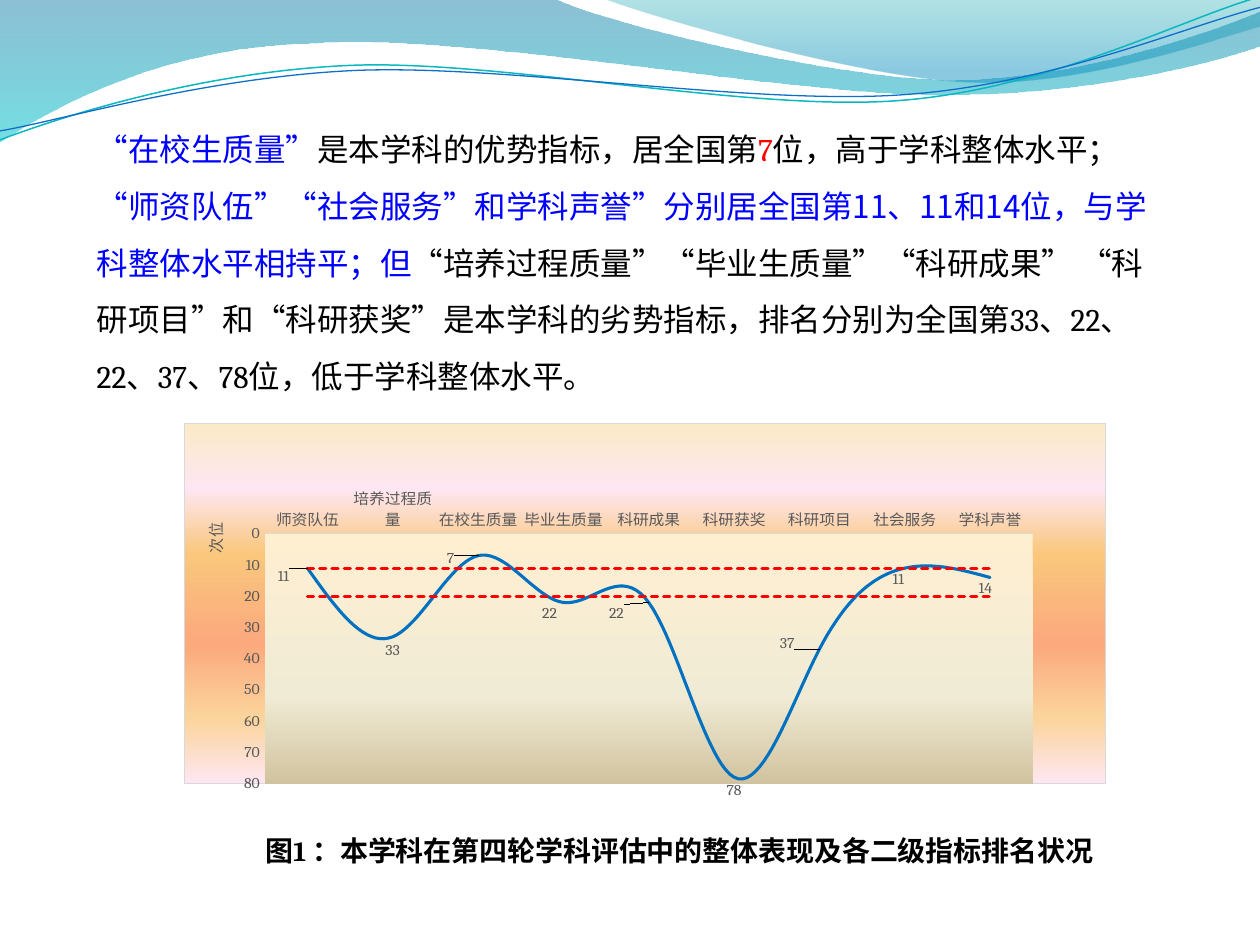
from lxml.etree import SubElement as Sub
from pptx import Presentation
from pptx.chart.data import CategoryChartData as Data
from pptx.dml.color import RGBColor as RGB
from pptx.enum.chart import XL_CHART_TYPE as Kind, XL_LABEL_POSITION as Pos
from pptx.enum.chart import XL_MARKER_STYLE as Mark, XL_TICK_MARK as Tick
from pptx.enum.dml import MSO_LINE as Dash
from pptx.enum.text import MSO_AUTO_SIZE as Auto
from pptx.oxml import parse_xml
from pptx.oxml.ns import nsdecls, qn
from pptx.util import Cm, Pt

# ---- content ----
HEX = {"black": "000000", "blue": "0000FF", "red": "FF0000", "grey": "595959",
       "pale": "D9D9D9", "curve": "0070C0", "teal": "0AB8BF", "deep": "0F6FC6"}
SERIF, SANS = "Cambria", "Noto Sans CJK SC"

BODY = [
    ("“在校生质量”", SANS, "blue"),
    ("是本学科的优势指标，居全国第", SERIF, "black"),
    ("7", SERIF, "red"),
    ("位，高于学科整体水平；", SERIF, "black"),
    ("“师资队伍”“社会服务”和学科声誉”分别居全国第11、11和14位，"
     "与学科整体水平相持平；但", SANS, "blue"),
    ("“培养过程质量”“毕业生质量”“科研成果” “科研项目”和“科研获奖”"
     "是本学科的劣势指标，排名分别为全国第33、22、22、37、78位，"
     "低于学科整体水平。", SERIF, "black"),
]
NOTE = [("图1 ：本学科在第四轮学科评估中的整体表现及各二级指标排名状况", SERIF, "black")]

RANKS = {"师资队伍": 11, "培养过程质量": 33, "在校生质量": 7, "毕业生质量": 22,
         "科研成果": 22, "科研获奖": 78, "科研项目": 37, "社会服务": 11, "学科声誉": 14}
LEVELS = (11, 20)
# shares of the chart size in %: label shifts by point, plot box, axis title
SHIFTS = {0: (-2.6, -1.4), 2: (-3, -3), 3: (-1.5, -0.8), 4: (-3.5, -0.8),
          6: (-3.5, -5.5), 7: (-0.7, -0.5), 8: (-0.5, -0.8)}
PLOT = (8.7, 36.7, 83.4, 69.4)
HEAD = (1.6, 27)

# gradient stops: place %, colour, opacity %
BACK = [(0, "FBEAC7", 100), (18, "FEE7F2", 100), (36, "FAC77D", 100),
        (61, "FBA97D", 100), (82, "FBD49C", 100), (100, "FEE7F2", 100)]
SAND = [(0, "FFEFD1", 100), (65, "F0EBD5", 100), (100, "D1C39F", 100)]

# waves in cm: a pair is a straight step, six numbers are a Bezier step
BANDS = [
    ([(0, 0), (11.18, -0.03), (12.09, 0.43, 16.87, 1.6, 19.25, 1.6),
      (21.67, 1.6, 24.33, 0.66, 25.4, 0.23), (25.43, 0.91),
      (24.97, 1.12, 22.1, 1.93, 18.95, 1.91), (15.8, 1.91, 9.7, 0.71, 6.53, 0.86),
      (3.28, 0.91, 1.17, 2.11, -0.03, 2.87)],
     [(0, "0074A1", 45), (100, "00C6CF", 55)]),
    ([(12.17, -0.03), (12.93, 0.28, 17.32, 1.57, 19.53, 1.65),
      (21.74, 1.75, 24.41, 0.81, 25.4, 0.53), (25.4, 0)],
     [(0, "00A1A9", 30), (80, "008BBF", 45)]),
]
LINES = [
    ([(0, 2.82), (1.22, 2.36, 4.01, 1.45, 7.04, 1.32),
      (10.03, 1.19, 15.06, 2.26, 18.11, 2.03),
      (21.16, 1.8, 23.83, 0.38, 25.35, -0.05)], "teal", 0.85),
    ([(0, 2.64), (1.19, 2.44, 4.17, 1.55, 7.19, 1.42),
      (10.24, 1.3, 15.16, 2.13, 18.21, 1.91),
      (21.23, 1.7, 23.9, 0.53, 25.4, 0.15)], "deep", 0.75),
]


# ---- helpers ----
def tint(name):
    return RGB.from_string(HEX[name])


def shade(stops):
    grad = parse_xml(f'<a:gradFill {nsdecls("a")} rotWithShape="1"><a:gsLst/>'
                     '<a:lin ang="5400000" scaled="0"/></a:gradFill>')
    for at, code, alpha in stops:
        stop = Sub(grad[0], qn("a:gs"), pos=str(at * 1000))
        clr = Sub(stop, qn("a:srgbClr"), val=code)
        if alpha < 100:
            Sub(clr, qn("a:alpha"), val=str(alpha * 1000))
    return grad


def draw(steps, close):
    pts = [(Cm(s[i]), Cm(s[i + 1])) for s in steps for i in range(0, len(s), 2)]
    pen = slide.shapes.build_freeform(*pts[0], scale=1.0)
    pen.add_line_segments(pts[1:], close=close)
    wave = pen.convert_to_shape()
    wave.shadow.inherit = False
    # join each three straight legs of a Bezier step into one curve
    legs = wave._element.findall(".//" + qn("a:lnTo"))
    for step in steps[1:]:
        size = len(step) // 2
        part, legs = legs[:size], legs[size:]
        if size == 3:
            part[0].tag = qn("a:cubicBezTo")
            for leg in part[1:]:
                part[0].append(leg[0])
                leg.getparent().remove(leg)
    return wave


def style(font, size, name="black", face=SERIF):
    font.size, font.name, font.bold = Pt(size), face, False
    font.color.rgb = tint(name)


def write(box, parts, size, bold=False, wrap=True, gap=1.0):
    frame = slide.shapes.add_textbox(*map(Cm, box)).text_frame
    frame.word_wrap, frame.auto_size = wrap, Auto.SHAPE_TO_FIT_TEXT
    para = frame.paragraphs[0]
    para.line_spacing = gap
    for text, face, name in parts:
        run = para.add_run()
        run.text = text
        style(run.font, size, name, face)
        run.font.bold = bold
        prop = run.font._element
        prop.set("lang", "zh-CN")
        Sub(prop, qn("a:ea"), typeface=SANS)


def place(spot, edge=False):
    tags = '<c:layoutTarget val="inner"/>' if len(spot) == 4 else ""
    if edge:
        tags += '<c:xMode val="edge"/><c:yMode val="edge"/>'
    for key, num in zip("xywh", spot):
        tags += f'<c:{key} val="{num / 100:.3f}"/>'
    return parse_xml(f'<c:layout {nsdecls("c")}><c:manualLayout>{tags}'
                     '</c:manualLayout></c:layout>')


def clear(node, tag):
    for old in node.findall(qn(tag)):
        node.remove(old)


# ---- slide and waves ----
deck = Presentation()
deck.slide_width, deck.slide_height = Cm(25.4), Cm(19.05)
slide = deck.slides.add_slide(deck.slide_layouts[6])

for steps, stops in BANDS:
    wave = draw(steps, True)
    wave.line.fill.background()
    wave.fill.solid()
    old = wave._element.spPr.find(qn("a:solidFill"))
    old.getparent().replace(old, shade(stops))
for steps, name, width in LINES:
    wave = draw(steps, False)
    wave.fill.background()
    wave.line.color.rgb, wave.line.width = tint(name), Pt(width)

# ---- chart ----
data = Data()
data.categories = list(RANKS)
data.add_series("Series 1", list(RANKS.values()))
for num, level in enumerate(LEVELS, 2):
    data.add_series(f"Series {num}", [level] * len(RANKS))
chart = slide.shapes.add_chart(Kind.LINE, Cm(3.71), Cm(8.53), Cm(18.59), Cm(7.59),
                               data).chart
chart.has_legend = chart.has_title = False
style(chart.font, 10)
plot = chart.plots[0]
plot.vary_by_categories = False

for row, name in zip(plot.series, ("curve", "red", "red")):
    row.smooth = True
    row.marker.style = Mark.NONE
    line = row.format.line
    line.color.rgb, line.width = tint(name), Pt(1.75)
    if name == "red":
        line.dash_style = Dash.SQUARE_DOT
    row._element.spPr.find(qn("a:ln")).set("cap", "rnd")

# rank labels, without leader lines
rank = plot.series[0]
tags = rank.data_labels
tags.show_value, tags.position = True, Pos.BELOW
style(tags.font, 9, "grey")
for i, shift in SHIFTS.items():
    tag = rank.points[i].data_label
    tag.position = Pos.BELOW
    style(tag.font, 9, "grey")
    tags._element.findall(qn("c:dLbl"))[-1].insert(1, place(shift))
clear(tags._element, "c:showLeaderLines")
tags._element.append(parse_xml(
    f'<c:extLst {nsdecls("c")}><c:ext uri="{{CE6537A1-D6FC-4f65-9D91-7224C49458BB}}" '
    'xmlns:c15="http://schemas.microsoft.com/office/drawing/2012/chart">'
    '<c15:showLeaderLines val="0"/></c:ext></c:extLst>'))

# axes
cat, val = chart.category_axis, chart.value_axis
for axis in (cat, val):
    axis.major_tick_mark = axis.minor_tick_mark = Tick.NONE
    axis.has_major_gridlines = False
    style(axis.tick_labels.font, 9, "grey")
    axis._element.find(qn("c:txPr")).find(qn("a:bodyPr")).set("rot", "0")
cat.format.line.color.rgb, cat.format.line.width = tint("pale"), Pt(0.75)
val.format.line.fill.background()
val.minimum_scale, val.maximum_scale, val.major_unit = 0, 80, 10
val.reverse_order = True
head = val.axis_title
head.text_frame.text = "次位"
style(head.text_frame.paragraphs[0].runs[0].font, 9, "grey")
head.text_frame._txBody.bodyPr.set("rot", "-5400000")
clear(head._element, "c:layout")
head._element.find(qn("c:tx")).addnext(place(HEAD, True))

# chart and plot fills
space = chart._chartSpace
area = space.chart.plotArea
clear(area, "c:layout")
area.insert(0, place(PLOT, True))
Sub(area, qn("c:spPr")).append(shade(SAND))
outer = parse_xml(f'<c:spPr {nsdecls("c", "a")}><a:ln w="9525"><a:solidFill>'
                  f'<a:srgbClr val="{HEX["pale"]}"/></a:solidFill></a:ln></c:spPr>')
outer.insert(0, shade(BACK))
space.chart.addnext(outer)

# ---- text ----
write((1.7, 2.12, 21.79, 6.02), BODY, 18, gap=1.5)
write((5.1, 16.68, 17.53, 0.94), NOTE, 16, bold=True, wrap=False)

deck.save("out.pptx")
